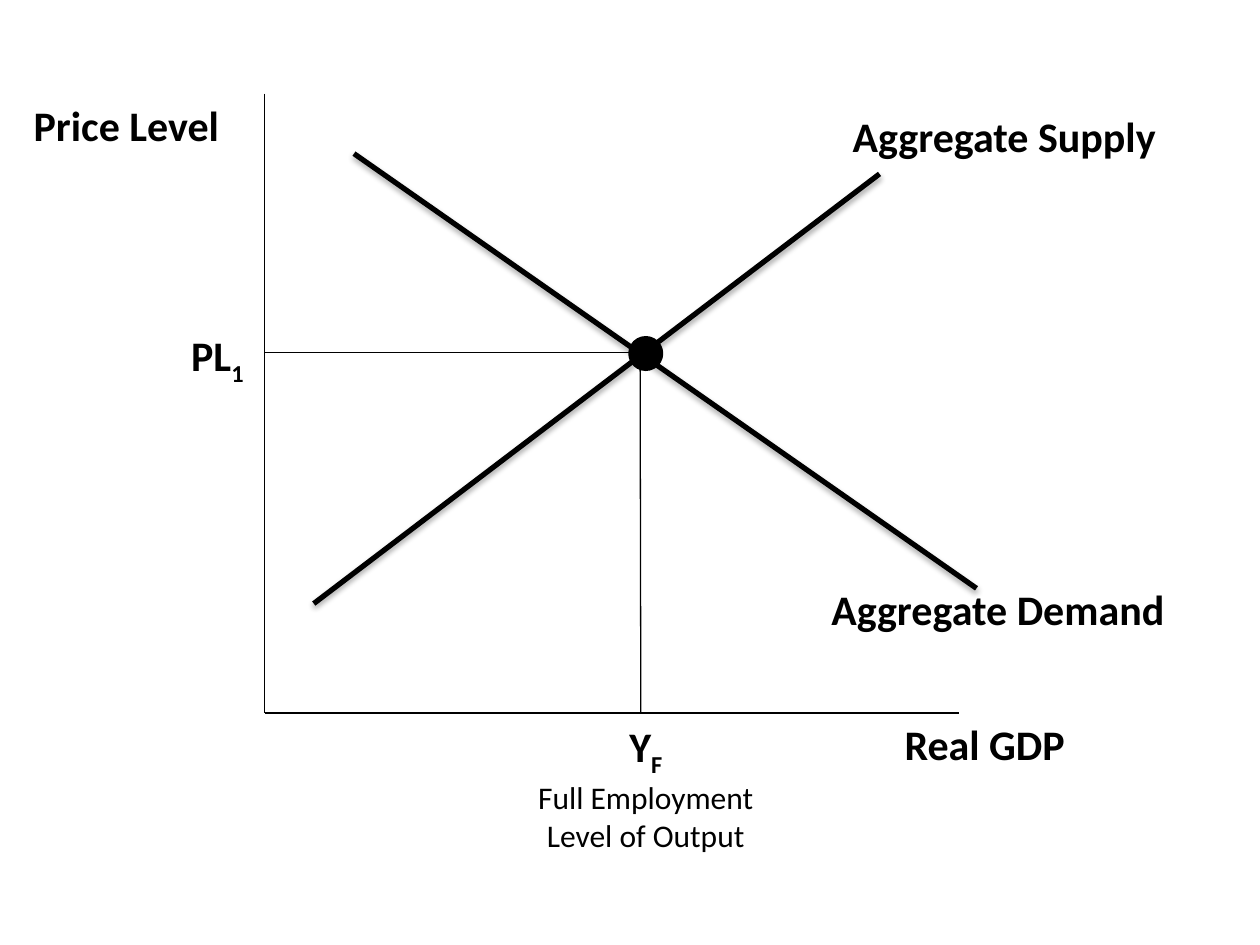
import pptx
import pptx.dml.color
import pptx.enum.shapes
import pptx.enum.text
import pptx.oxml
import pptx.oxml.ns
import pptx.util

Pt = pptx.util.Pt
ALIGN = pptx.enum.text.PP_ALIGN
COLOURS = {"ink": "000000", "paper": "FFFFFF"}
INK = pptx.dml.color.RGBColor.from_string(COLOURS["ink"])
FONT = "Calibri"
NAMESPACE = pptx.oxml.ns.nsdecls("a")
NO_EFFECT = f"<a:effectLst {NAMESPACE}/>"
CURVE_SHADOW = (
    f'<a:effectLst {NAMESPACE}><a:outerShdw blurRad="{Pt(3.1)}" dist="{Pt(1.8)}" '
    'dir="5400000" rotWithShape="0">'
    f'<a:srgbClr val="{COLOURS["ink"]}"><a:alpha val="35000"/></a:srgbClr>'
    "</a:outerShdw></a:effectLst>"
)


def add_text(paragraph, text, size=24, bold=True, subscript=False):
    span = paragraph.add_run()
    span.text = text
    span.font.name = FONT
    span.font.size = Pt(size)
    span.font.bold = bold
    span.font.color.rgb = INK
    if subscript:
        span.font._element.set("baseline", "-25000")


deck = pptx.Presentation()
deck.slide_width, deck.slide_height = Pt(720), Pt(540)
page = deck.slides.add_slide(deck.slide_layouts[6])
page.background.fill.solid()
page.background.fill.fore_color.rgb = pptx.dml.color.RGBColor.from_string(COLOURS["paper"])

# Axes, curves and guides to the equilibrium: start x, start y, end x, end y
axis_left, axis_bottom = 151.2, 407.5
output_x, price_y = 366.2, 201.6
thin_lines = [
    (axis_left, 53.5, axis_left, axis_bottom),
    (axis_left, axis_bottom, 548, axis_bottom),
    (output_x - 0.4, 205, output_x, axis_bottom),
    (output_x, price_y, axis_left, price_y),
]
curves = [
    (179.3, 344.9, 502.6, 99.4),  # supply
    (202.3, 87.8, 558, 336.2),  # demand
]
for lines, width, effect in ((thin_lines, 0.75, NO_EFFECT), (curves, 3, CURVE_SHADOW)):
    for ends in lines:
        line = page.shapes.add_connector(
            pptx.enum.shapes.MSO_CONNECTOR.STRAIGHT, *map(Pt, ends)
        )
        line.line.color.rgb = INK
        line.line.width = Pt(width)
        line._element.spPr.append(pptx.oxml.parse_xml(effect))

# Labels: position, then the base text and its subscript
labels = [
    ((12.2, 53.5, 127.5, 36), "Price Level", "", ALIGN.LEFT),
    ((509.8, 407, 144, 36.5), "Real GDP", "", ALIGN.LEFT),
    ((480.2, 59.8, 221.8, 36), "Aggregate Supply", "", ALIGN.LEFT),
    ((102.2, 185, 62.6, 36.5), "PL", "1", ALIGN.LEFT),
    ((468, 330, 246.2, 36), "Aggregate Demand", "", ALIGN.LEFT),
    ((288, 408.2, 162, 80), "Y", "F", ALIGN.CENTER),
]
for position, base, subscript, alignment in labels:
    box = page.shapes.add_textbox(*map(Pt, position))
    box.text_frame.word_wrap = True
    paragraph = box.text_frame.paragraphs[0]
    paragraph.alignment = alignment
    add_text(paragraph, base)
    if subscript:
        add_text(paragraph, subscript, subscript=True)
    if base == "Y":
        caption = box.text_frame.add_paragraph()
        caption.alignment = alignment
        add_text(caption, "Full Employment Level of Output", size=18, bold=False)

equilibrium = page.shapes.add_shape(
    pptx.enum.shapes.MSO_SHAPE.OVAL, Pt(360), Pt(193), Pt(18), Pt(18)
)
equilibrium.shadow.inherit = False
equilibrium.fill.solid()
equilibrium.fill.fore_color.rgb = INK
equilibrium.line.color.rgb = INK
equilibrium.line.width = Pt(2)

deck.save("out.pptx")
